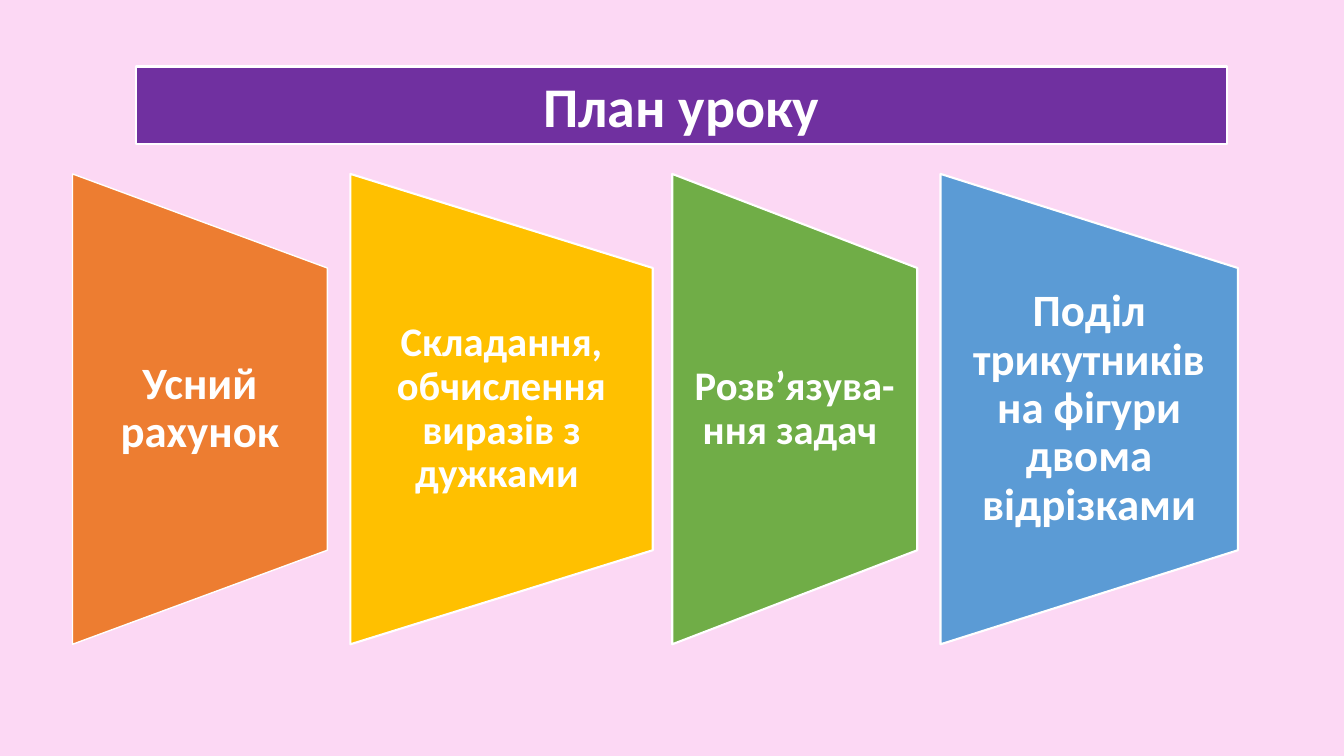
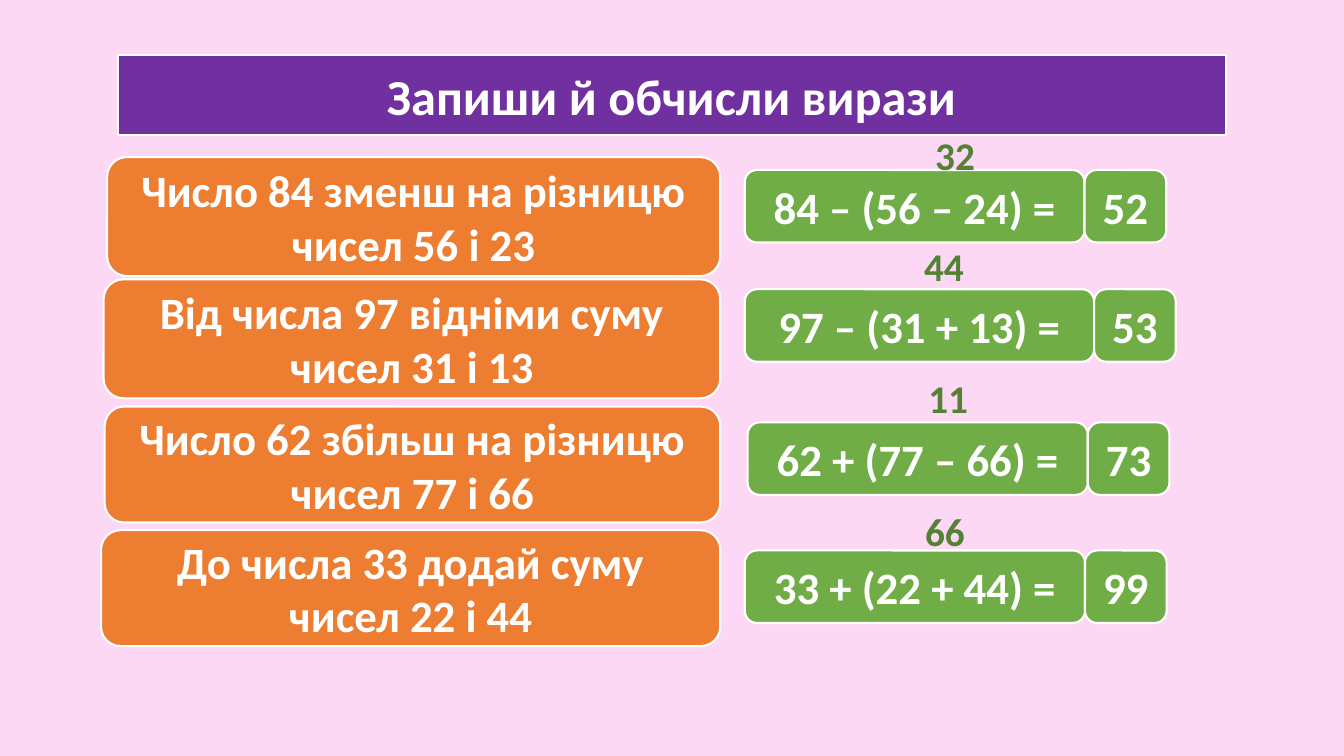
from dataclasses import dataclass

from pptx import Presentation
from pptx.dml.color import RGBColor
from pptx.enum.shapes import MSO_SHAPE
from pptx.enum.text import MSO_ANCHOR, PP_ALIGN
from pptx.util import Pt

RECTANGLE = MSO_SHAPE.RECTANGLE
ROUNDED = MSO_SHAPE.ROUNDED_RECTANGLE
TRAPEZOID = MSO_SHAPE.FLOWCHART_MANUAL_OPERATION
CENTER = PP_ALIGN.CENTER
MIDDLE = MSO_ANCHOR.MIDDLE


@dataclass(frozen=True)
class Theme:
    font: str = "Calibri"
    background: str = "FCD8F4"
    purple: str = "7030A0"
    orange: str = "ED7D31"
    yellow: str = "FFC000"
    green: str = "70AD47"
    blue: str = "5B9BD5"
    dark_green: str = "548235"
    white: str = "FFFFFF"
    outline: float = 1.5
    plan_title: int = 40
    task_title: int = 36
    body: int = 32
    small_body: int = 29
    hint: int = 28


THEME = Theme()


@dataclass(frozen=True)
class Box:
    left: float
    top: float
    width: float
    height: float

    @property
    def right(self):
        return self.left + self.width

    def lengths(self):
        return [Pt(value) for value in (self.left, self.top, self.width, self.height)]


@dataclass(frozen=True)
class Step:
    text: str
    color: str
    size: int
    left: float
    width: float
    outline: float = THEME.outline


@dataclass(frozen=True)
class Exercise:
    prompt: str
    equation: str
    result: str
    hint: str
    prompt_box: Box
    equation_box: Box
    hint_center: float
    hint_top: float


PLAN_BANNER = Box(97.2, 47.5, 779, 55.5)
PLAN_AREA = Box(51.8, 124.2, 832, 336)
STEPS = [
    Step("Усний рахунок", THEME.orange, THEME.body, 0, 182, 1),
    Step("Складання, обчислення виразів з дужками ", THEME.yellow,
         THEME.small_body, 198.5, 216),
    Step("Розв’язува-ння задач ", THEME.green, THEME.small_body, 428.4, 175),
    Step("Поділ трикутників на фігури двома відрізками", THEME.blue,
         THEME.body, 620, 212.4),
]

TASK_BANNER = Box(84.2, 39, 791.3, 57.6)
RESULT_WIDTH = 58.3
HINT_HEIGHT = 51.8
EXERCISES = [
    Exercise("Число 84 зменш на різницю чисел 56 і 23", "84 – (56 – 24) =", "52", "32",
             Box(76.5, 112.2, 438, 85), Box(532, 121.4, 242.7, 51.8), 682.2, 85),
    Exercise("Від числа 97 відніми суму чисел 31 і 13", "97 – (31 + 13) =", "53", "44",
             Box(74, 199.5, 440.5, 85), Box(532, 206.6, 249.5, 51.8), 674.3, 164.2),
    Exercise("Число 62 збільш на різницю чисел 77 і 66", "62 + (77 – 66) =", "73", "11",
             Box(74.8, 290.4, 439.7, 82.8), Box(534, 301.7, 243, 51.8), 677.2, 258.5),
    Exercise("До числа 33 додай суму чисел 22 і 44", "33 + (22 + 44) =", "99", "66",
             Box(72.2, 378.7, 442.3, 82.8), Box(532, 393.2, 243, 51.8), 675, 353.5),
]


def rgb(color):
    return RGBColor.from_string(color)


def write(holder, text, *, size, color=THEME.white, side_inset=7.2,
          edge_inset=3.6, line_spacing=1.0):
    frame = holder.text_frame
    frame.word_wrap = True
    frame.vertical_anchor = MIDDLE
    frame.margin_left = frame.margin_right = Pt(side_inset)
    frame.margin_top = frame.margin_bottom = Pt(edge_inset)
    paragraph = frame.paragraphs[0]
    paragraph.alignment = CENTER
    paragraph.line_spacing = line_spacing
    run = paragraph.add_run()
    run.text = text
    run.font.name = THEME.font
    run.font.size = Pt(size)
    run.font.bold = True
    run.font.color.rgb = rgb(color)


def add_block(slide, kind, box, color, outline=THEME.outline):
    block = slide.shapes.add_shape(kind, *box.lengths())
    block.shadow.inherit = False
    block.fill.solid()
    block.fill.fore_color.rgb = rgb(color)
    block.line.color.rgb = rgb(THEME.white)
    block.line.width = Pt(outline)
    return block


def add_label(slide, box, text, **text_format):
    write(slide.shapes.add_textbox(*box.lengths()), text, **text_format)


def add_banner(slide, box, title, size):
    write(add_block(slide, RECTANGLE, box, THEME.purple), title, size=size)


def add_step(slide, box, step):
    unrotated = Box(box.left + (box.width - box.height) / 2,
                    box.top + (box.height - box.width) / 2,
                    box.height, box.width)
    panel = add_block(slide, TRAPEZOID, unrotated, step.color, step.outline)
    panel.rotation = 270
    label_box = Box(box.left, box.top + box.height / 5, box.width, box.height * 3 / 5)
    add_label(slide, label_box, step.text, size=step.size,
              side_inset=step.size / 2, edge_inset=0, line_spacing=0.9)


def add_exercise(slide, exercise):
    equation_box = exercise.equation_box
    result_box = Box(equation_box.right, equation_box.top, RESULT_WIDTH, equation_box.height)
    for text, box, color in (
        (exercise.prompt, exercise.prompt_box, THEME.orange),
        (exercise.equation, equation_box, THEME.green),
        (exercise.result, result_box, THEME.green),
    ):
        write(add_block(slide, ROUNDED, box, color), text, size=THEME.body)
    hint_box = Box(exercise.hint_center - RESULT_WIDTH / 2, exercise.hint_top,
                   RESULT_WIDTH, HINT_HEIGHT)
    add_label(slide, hint_box, exercise.hint, size=THEME.hint, color=THEME.dark_green)


def add_slide(deck):
    slide = deck.slides.add_slide(deck.slide_layouts[6])
    slide.background.fill.solid()
    slide.background.fill.fore_color.rgb = rgb(THEME.background)
    return slide


def build_plan(deck):
    slide = add_slide(deck)
    add_banner(slide, PLAN_BANNER, "План уроку", THEME.plan_title)
    for step in STEPS:
        box = Box(PLAN_AREA.left + step.left, PLAN_AREA.top, step.width, PLAN_AREA.height)
        add_step(slide, box, step)


def build_tasks(deck):
    slide = add_slide(deck)
    add_banner(slide, TASK_BANNER, "Запиши й обчисли вирази", THEME.task_title)
    for exercise in EXERCISES:
        add_exercise(slide, exercise)


def main():
    deck = Presentation()
    deck.slide_width = Pt(960)
    deck.slide_height = Pt(540)
    build_plan(deck)
    build_tasks(deck)
    deck.save("out.pptx")


if __name__ == "__main__":
    main()
